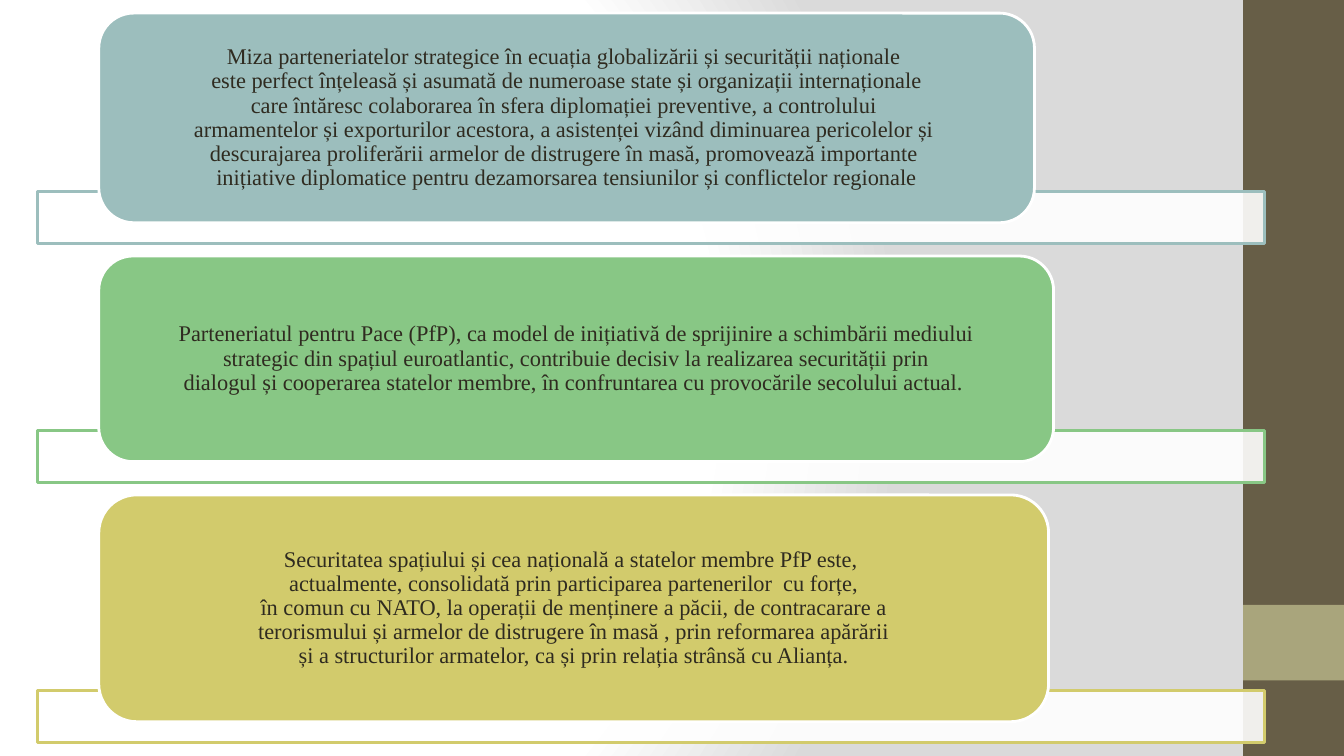
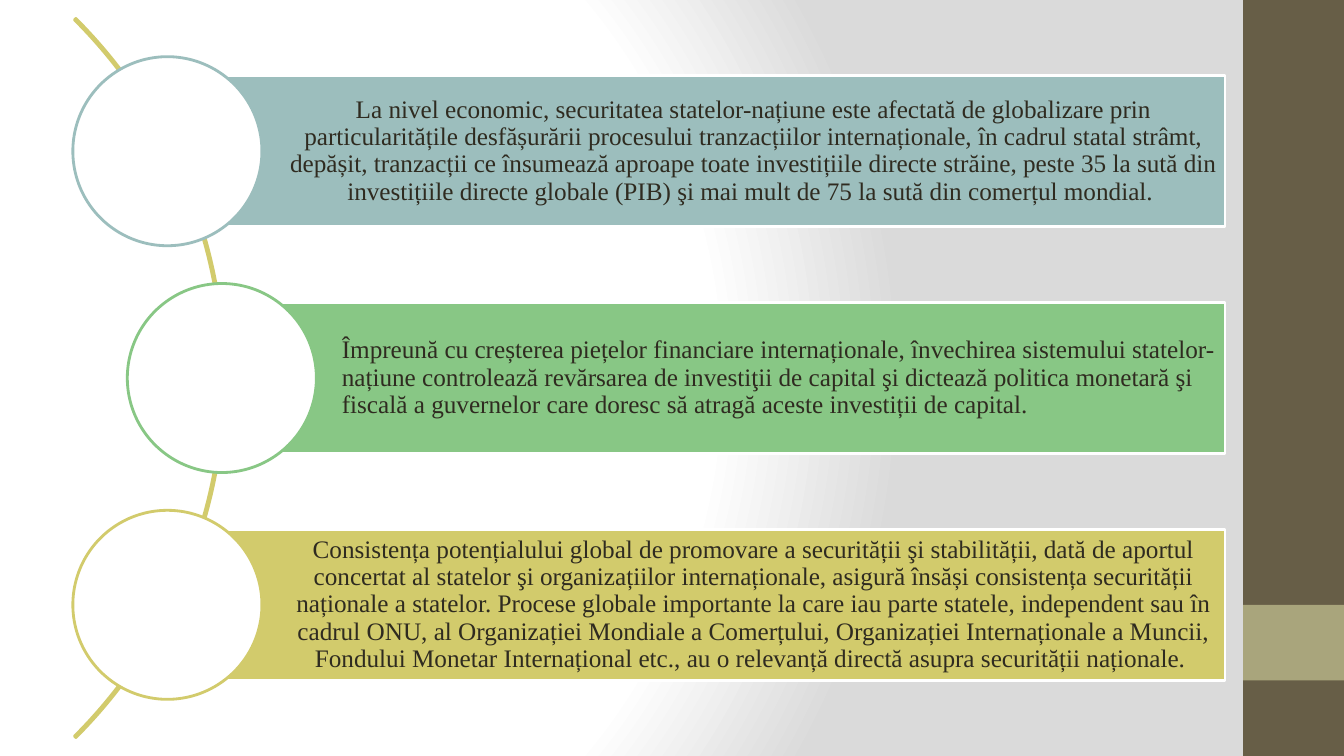
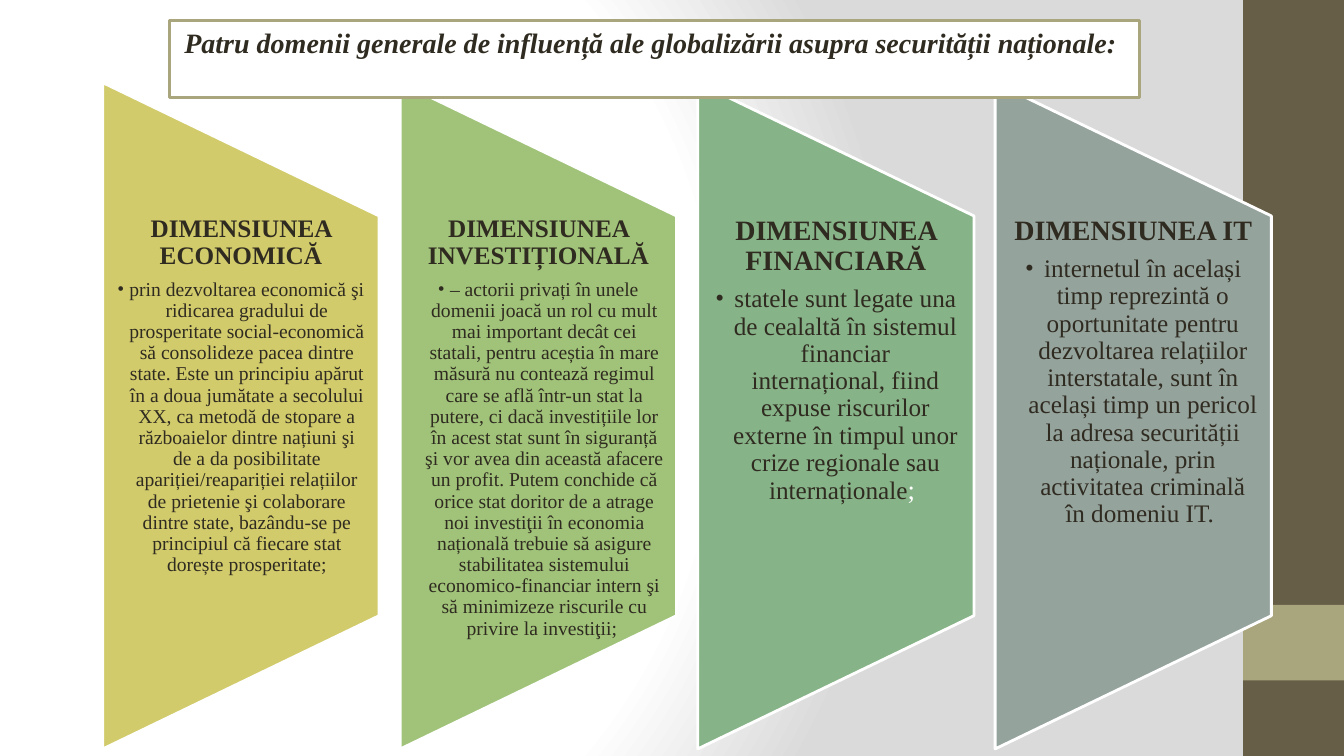
from copy import deepcopy
from dataclasses import dataclass

from lxml import etree
from pptx import Presentation
from pptx import util as u
from pptx.dml.color import RGBColor
from pptx.enum import shapes, text
from pptx.oxml import parse_xml
from pptx.oxml.ns import nsdecls, qn

KIND = shapes.MSO_SHAPE
ANCHOR = text.MSO_ANCHOR
ALIGN = text.PP_ALIGN


@dataclass(frozen=True)
class Theme:
    font: str = "Times New Roman"
    ink: str = "2F2B20"
    white: str = "FFFFFF"
    grey: str = "DADADA"
    brown: str = "675E47"
    khaki: str = "A9A57C"
    rows: tuple = ("9CBEBD", "88C785", "D2CB6C")
    columns: tuple = ("D2CB6C", "A0C379", "87B388", "95A39D")
    line: float = 2
    small: int = 14
    note: int = 16
    normal: int = 18
    semicolon: int = 19
    large: int = 20
    spacing: float = 0.9


@dataclass(frozen=True)
class Box:
    x: float
    y: float
    w: float
    h: float

    def inches(self):
        return [u.Inches(v) for v in (self.x, self.y, self.w, self.h)]


T = Theme()
SLIDE = Box(0, 0, 13.33, 7.5)

PARTNERSHIPS = [
    (9.28, 2.08, """Miza parteneriatelor strategice în ecuația globalizării și securității naționale 
este perfect înțeleasă și asumată de numeroase state și organizații internaționale
care întăresc colaborarea în sfera diplomației preventive, a controlului 
armamentelor și exporturilor acestora, a asistenței vizând diminuarea pericolelor și 
descurajarea proliferării armelor de distrugere în masă, promovează importante 
inițiative diplomatice pentru dezamorsarea tensiunilor și conflictelor regionale"""),
    (9.47, 2.04, """Parteneriatul pentru Pace (PfP), ca model de inițiativă de sprijinire a schimbării mediului
 strategic din spațiul euroatlantic, contribuie decisiv la realizarea securității prin 
dialogul și cooperarea statelor membre, în confruntarea cu provocările secolului actual. """),
    (9.42, 2.25, """Securitatea spațiului și cea națională a statelor membre PfP este, 
actualmente, consolidată prin participarea partenerilor  cu forțe,
în comun cu NATO, la operații de menținere a păcii, de contracarare a
terorismului și armelor de distrugere în masă , prin reformarea apărării
și a structurilor armatelor, ca și prin relația strânsă cu Alianța."""),
]

ECONOMY = [
    (0, ALIGN.CENTER,
     "La nivel economic, securitatea statelor-națiune este afectată de globalizare prin "
     "particularitățile desfășurării procesului tranzacțiilor internaționale, în cadrul statal "
     "strâmt, depășit, tranzacții ce însumează aproape toate investițiile directe străine, peste "
     "35 la sută din investițiile directe globale (PIB) şi mai mult de 75 la sută din comerțul "
     "mondial. "),
    (0.54, ALIGN.LEFT,
     "Împreună cu creșterea piețelor financiare internaționale, învechirea sistemului "
     "statelor-națiune controlează revărsarea de investiţii de capital şi dictează politica "
     "monetară şi fiscală a guvernelor care doresc să atragă aceste investiții de capital."),
    (0, ALIGN.CENTER,
     "Consistența potențialului global de promovare a securității şi stabilității, dată de "
     "aportul concertat al statelor şi organizațiilor internaționale, asigură însăși consistența "
     "securității naționale a statelor. Procese globale importante la care iau parte statele, "
     "independent sau în cadrul ONU, al Organizației Mondiale a Comerțului, Organizației "
     "Internaționale a Muncii, Fondului Monetar Internațional etc., au o relevanță directă "
     "asupra securității naționale. "),
]

DOMAINS_TITLE = "Patru domenii generale de influență ale globalizării asupra securității naționale: "
# heading, heading size, body size, inset, bullet indent, body, white ending
DOMAINS = [
    ("DIMENSIUNEA ECONOMICĂ", T.normal, T.small, 0.12, 0.12,
     "prin dezvoltarea economică şi ridicarea gradului de prosperitate social-economică să "
     "consolideze pacea dintre state. Este un principiu apărut în a doua jumătate a secolului "
     "XX, ca metodă de stopare a războaielor dintre națiuni şi de a da posibilitate "
     "apariției/reapariției relațiilor de prietenie şi colaborare dintre state, bazându-se pe "
     "principiul că fiecare stat dorește prosperitate;", ""),
    ("DIMENSIUNEA INVESTIȚIONALĂ", T.normal, T.small, 0.12, 0.12,
     "– actorii privați în unele domenii joacă un rol cu mult mai important decât cei statali, "
     "pentru aceștia în mare măsură nu contează regimul care se află într-un stat la putere, ci "
     "dacă investițiile lor în acest stat sunt în siguranță şi vor avea din această afacere un "
     "profit. Putem conchide că orice stat doritor de a atrage noi investiţii în economia "
     "națională trebuie să asigure stabilitatea sistemului economico-financiar intern şi să "
     "minimizeze riscurile cu privire la investiţii; ", ""),
    ("DIMENSIUNEA FINANCIARĂ", T.large, T.normal, 0.14, 0.19,
     "statele sunt legate una de cealaltă în sistemul financiar internațional, fiind expuse "
     "riscurilor externe în timpul unor crize regionale sau internaționale", "; "),
    ("DIMENSIUNEA IT", T.large, T.normal, 0.14, 0.19,
     "internetul în același timp reprezintă o oportunitate pentru dezvoltarea relațiilor "
     "interstatale, sunt în același timp un pericol la adresa securității naționale, prin "
     "activitatea criminală în domeniu IT. ", ""),
]


def rgb(color):
    return RGBColor.from_string(color)


def paint(sp, fill=None, line=None, alpha=None):
    if fill:
        sp.fill.solid()
        sp.fill.fore_color.rgb = rgb(fill)
        if alpha:
            color = sp.fill._xPr.find(".//" + qn("a:srgbClr"))
            etree.SubElement(color, qn("a:alpha"), val=str(alpha * 1000))
    else:
        sp.fill.background()
    if line:
        sp.line.color.rgb = rgb(line)
        sp.line.width = u.Pt(T.line)
    else:
        sp.line.fill.background()


def add_shape(slide, kind, box, **look):
    sp = slide.shapes.add_shape(kind, *box.inches())
    sp.shadow.inherit = False
    paint(sp, **look)
    return sp


def set_frame(sp, anchor, left=0.1, top=0.05, right=0.1, bottom=0.05):
    tf = sp.text_frame
    tf.word_wrap = True
    tf.auto_size = text.MSO_AUTO_SIZE.NONE
    tf.vertical_anchor = anchor
    tf.margin_left, tf.margin_top = u.Inches(left), u.Inches(top)
    tf.margin_right, tf.margin_bottom = u.Inches(right), u.Inches(bottom)
    return tf


def write(p, words, size=T.normal, color=T.ink, bold=False, italic=False,
          align=ALIGN.CENTER, spacing=T.spacing):
    """Add words to a paragraph; each newline becomes a line break."""
    p.alignment = align
    p.line_spacing = spacing
    for i, words_in_line in enumerate(words.split("\n")):
        if i:
            p.add_line_break()
            p._p[-1].append(deepcopy(r._r.rPr))
        r = p.add_run()
        r.text = words_in_line
        r.font.name, r.font.size = T.font, u.Pt(size)
        r.font.bold, r.font.italic = bold, italic
        r.font.color.rgb = rgb(color)


def add_bullet(p, indent):
    pPr = p._p.get_or_add_pPr()
    pPr.set("marL", str(u.Inches(indent)))
    pPr.set("indent", str(-u.Inches(indent)))
    etree.SubElement(pPr, qn("a:buFont"), typeface=T.font)
    etree.SubElement(pPr, qn("a:buChar"), char="•")


def style_master(prs, slide):
    """Give the master its gradient and side bands, which are drawn on slide first."""
    master = prs.slide_master
    cSld = master._element.cSld
    for bg in cSld.findall(qn("p:bg")):
        cSld.remove(bg)
    stops = "".join(
        f'<a:gs pos="{pos * 1000}"><a:srgbClr val="{color}"/></a:gs>'
        for pos, color in ((0, T.white), (75, T.white), (100, T.grey)))
    cSld.insert(0, parse_xml(
        f'<p:bg {nsdecls("p", "a")}><p:bgPr><a:gradFill rotWithShape="1">'
        f'<a:gsLst>{stops}</a:gsLst><a:path path="circle">'
        '<a:fillToRect l="20000" t="50000" r="100000" b="50000"/></a:path>'
        '</a:gradFill><a:effectLst/></p:bgPr></p:bg>'))
    band_w = 1
    bands = ((0, SLIDE.h, T.brown), (SLIDE.h * 0.8, SLIDE.h * 0.1, T.khaki))
    for i, (y, h, color) in enumerate(bands):
        sp = add_shape(slide, KIND.RECTANGLE, Box(SLIDE.w - band_w, y, band_w, h), fill=color)
        sp._element.nvSpPr.cNvPr.set("id", str(20 + i))
        master.shapes._spTree.append(sp._element)


def partnership_rows(slide, box):
    """Stack rounded cards, each overlapping a thin bar as wide as the box."""
    bar_h, overlap, gap, indent = 0.52, 0.31, 0.12, 0.61
    y = box.y
    for (w, h, words), color in zip(PARTNERSHIPS, T.rows):
        bar_y = y + h - overlap
        add_shape(slide, KIND.RECTANGLE, Box(box.x, bar_y, box.w, bar_h),
                  fill=T.white, line=color, alpha=90)
        card = add_shape(slide, KIND.ROUNDED_RECTANGLE, Box(box.x + indent, y, w, h),
                         fill=color, line=T.white)
        tf = set_frame(card, ANCHOR.MIDDLE, 0.32, 0, 0.32, 0)
        write(tf.paragraphs[0], words, size=T.note)
        y = bar_y + bar_h + gap


def economy_arc(slide, box):
    """Place panels with a circle at their left end along a large arc."""
    step = box.h / len(ECONOMY)
    panel_h = step * 2 / 3
    circle_d = panel_h * 1.25
    arc_d = 10.09
    arc = add_shape(slide, KIND.BLOCK_ARC,
                    Box(box.x + 0.57 - arc_d, box.y + (box.h - arc_d) / 2, arc_d, arc_d),
                    line=T.rows[-1])
    for i, value in enumerate((189, 27, 0.002)):
        arc.adjustments[i] = value
    for i, ((indent, align, words), color) in enumerate(zip(ECONOMY, T.rows)):
        x, middle = box.x + indent, box.y + (i + 0.5) * step
        panel = add_shape(slide, KIND.RECTANGLE,
                          Box(x, middle - panel_h / 2, box.w - indent, panel_h),
                          fill=color, line=T.white)
        tf = set_frame(panel, ANCHOR.MIDDLE, 1.19, 0.05, 0.05, 0.05)
        write(tf.paragraphs[0], words, align=align)
        add_shape(slide, KIND.OVAL,
                  Box(x - circle_d / 2, middle - circle_d / 2, circle_d, circle_d),
                  fill=T.white, line=color)


def domain_columns(slide, box):
    step, w = 2.95, 2.74
    for i, (domain, color) in enumerate(zip(DOMAINS, T.columns)):
        domain_column(slide, Box(box.x + i * step, box.y, w, box.h), color, *domain)


def domain_column(slide, box, color, heading, heading_size, size, inset, indent, body, ending):
    turned = Box(box.x + (box.w - box.h) / 2, box.y + (box.h - box.w) / 2, box.h, box.w)
    sp = add_shape(slide, KIND.FLOWCHART_MANUAL_OPERATION, turned, fill=color, line=T.white)
    sp.rotation = 270
    words = Box(box.x, box.y + box.h * 0.2, box.w, box.h * 0.6)
    tf = set_frame(slide.shapes.add_textbox(*words.inches()), ANCHOR.TOP, inset, 0, inset, 0)
    p = tf.paragraphs[0]
    write(p, heading, size=heading_size, bold=True)
    p.space_after = u.Pt(heading_size * 0.35)
    p = tf.add_paragraph()
    p.level = 1
    write(p, body, size=size)
    if ending:
        write(p, ending, size=T.semicolon, color=T.white)
    add_bullet(p, indent)


def title_box(slide, box, words):
    """Format the title placeholder and bring it to the front."""
    title = slide.shapes.title
    title.left, title.top, title.width, title.height = box.inches()
    paint(title, fill=T.white, line=T.khaki)
    tf = set_frame(title, ANCHOR.TOP)
    write(tf.paragraphs[0], words, size=T.large, bold=True, italic=True, spacing=1.0)
    slide.shapes._spTree.append(title._element)


def main():
    prs = Presentation()
    prs.slide_width, prs.slide_height = u.Inches(SLIDE.w), u.Inches(SLIDE.h)
    title_only, blank = prs.slide_layouts[5], prs.slide_layouts[6]

    s = prs.slides.add_slide(blank)
    style_master(prs, s)
    partnership_rows(s, Box(0.37, 0.13, 12.17, 7.24))

    s = prs.slides.add_slide(blank)
    economy_arc(s, Box(1.66, 0.375, 10.49, 6.75))

    s = prs.slides.add_slide(title_only)
    domain_columns(s, Box(1.02, 0.82, 11.59, 6.61))
    title_box(s, Box(1.68, 0.2, 9.62, 0.77), DOMAINS_TITLE)

    prs.save("out.pptx")


if __name__ == "__main__":
    main()
